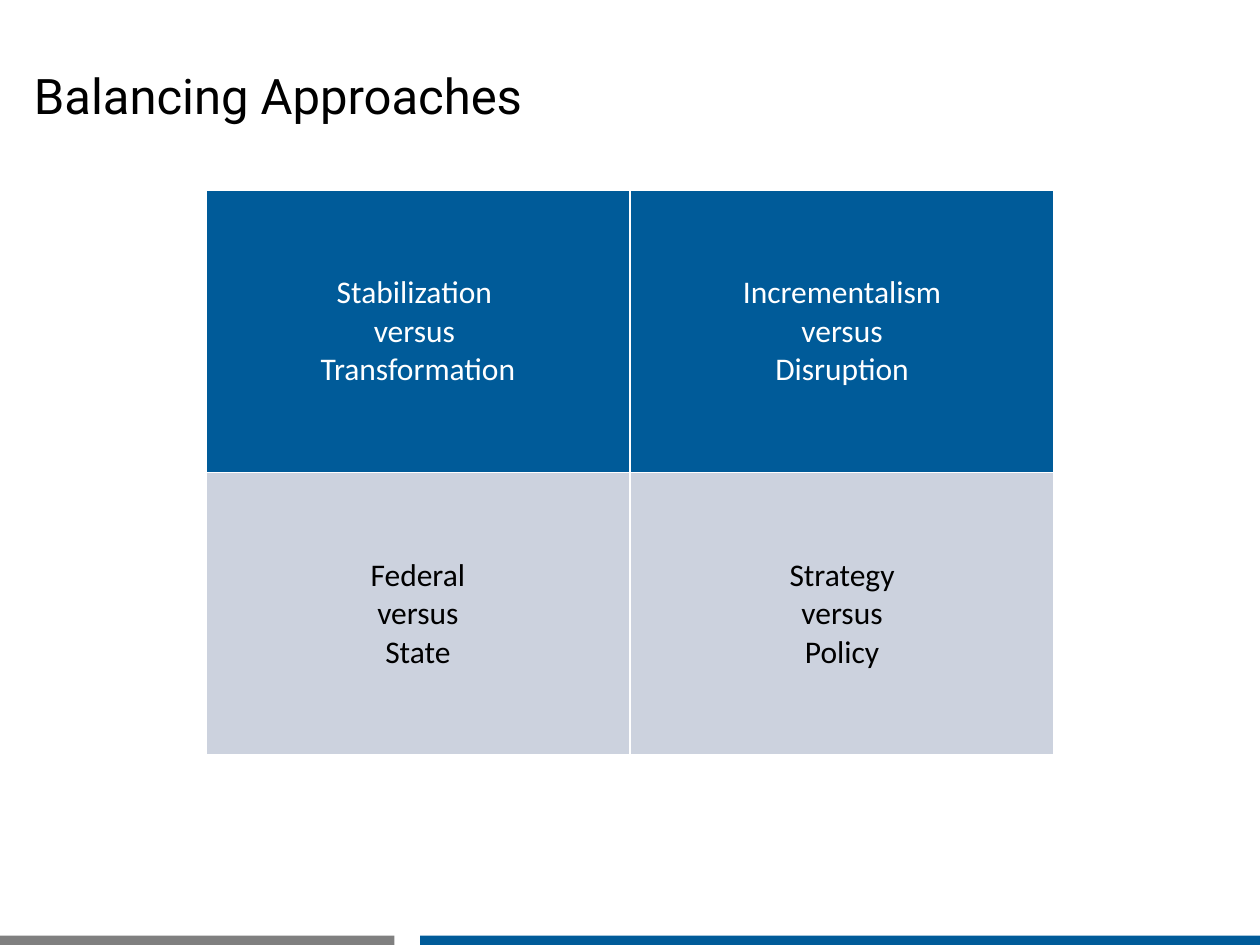
from lxml.etree import fromstring
from pptx import Presentation
from pptx.dml.color import RGBColor
from pptx.enum.shapes import MSO_SHAPE
from pptx.enum.text import MSO_ANCHOR, PP_ALIGN
from pptx.oxml.ns import nsdecls
from pptx.util import Cm, Pt

TITLE = "Balancing Approaches"
APPROACHES = [
    [("Stabilization ", "versus ", "Transformation"),
     ("Incrementalism", "versus", "Disruption")],
    [("Federal", "versus", "State"),
     ("Strategy", "versus", "Policy")],
]
THEME = {
    "blue": "005B99", "pale": "CCD2DE", "gray": "808080",
    "white": "FFFFFF", "black": "000000",
    "title_font": "Roboto", "body_font": "Calibri",
    "title_size": 28, "body_size": 18, "border": 1,
}
ROW_STYLES = [("blue", "white"), ("pale", "black")]
TABLE_LEFT, TABLE_TOP, CELL_W, CELL_H = 4.15, 3.84, 8.55, 5.69
BAR_TOP, BAR_H = 18.86, 0.19
FOOTER_BARS = [(8.47, 16.93, "blue"), (0, 7.95, "gray")]


def color(name):
    return RGBColor.from_string(THEME[name])


def write(tf, lines, *, font, size, fill, align=PP_ALIGN.LEFT):
    for i, line in enumerate(lines):
        p = tf.paragraphs[0] if i == 0 else tf.add_paragraph()
        p.alignment = align
        r = p.add_run()
        r.text = line
        r.font.name, r.font.size = THEME[font], Pt(THEME[size])
        r.font.bold = False
        r.font.color.rgb = color(fill)


def set_borders(cell):
    tc_pr = cell._tc.get_or_add_tcPr()
    for i, side in enumerate("LRTB"):
        tc_pr.insert(i, fromstring(
            f'<a:ln{side} {nsdecls("a")} w="{Pt(THEME["border"])}"><a:solidFill>'
            f'<a:srgbClr val="{THEME["white"]}"/></a:solidFill></a:ln{side}>'))


def add_title(s):
    sp = s.shapes.title
    sp.left, sp.top, sp.width, sp.height = Cm(0.43), Cm(1.27), Cm(17.78), Cm(1.27)
    sp.text_frame.vertical_anchor = MSO_ANCHOR.MIDDLE
    write(sp.text_frame, [TITLE], font="title_font", size="title_size", fill="black")


def add_approaches(s):
    rows, cols = len(APPROACHES), len(APPROACHES[0])
    table = s.shapes.add_table(rows, cols, Cm(TABLE_LEFT), Cm(TABLE_TOP),
                               Cm(cols * CELL_W), Cm(rows * CELL_H)).table
    table.horz_banding = False
    for i, (row, (fill, ink)) in enumerate(zip(APPROACHES, ROW_STYLES)):
        for j, lines in enumerate(row):
            cell = table.cell(i, j)
            cell.fill.solid()
            cell.fill.fore_color.rgb = color(fill)
            cell.vertical_anchor = MSO_ANCHOR.MIDDLE
            set_borders(cell)
            write(cell.text_frame, lines, font="body_font", size="body_size",
                  fill=ink, align=PP_ALIGN.CENTER)


def add_footer(s):
    for left, width, fill in FOOTER_BARS:
        sp = s.shapes.add_shape(MSO_SHAPE.RECTANGLE, Cm(left), Cm(BAR_TOP),
                                Cm(width), Cm(BAR_H))
        sp.shadow.inherit = False
        sp.fill.solid()
        sp.fill.fore_color.rgb = color(fill)
        sp.line.fill.background()


def main():
    """Build the slide on balancing approaches."""
    prs = Presentation()
    prs.slide_width, prs.slide_height = Cm(25.4), Cm(19.05)
    s = prs.slides.add_slide(prs.slide_layouts[5])
    add_title(s)
    add_approaches(s)
    add_footer(s)
    prs.save("out.pptx")


if __name__ == "__main__":
    main()
